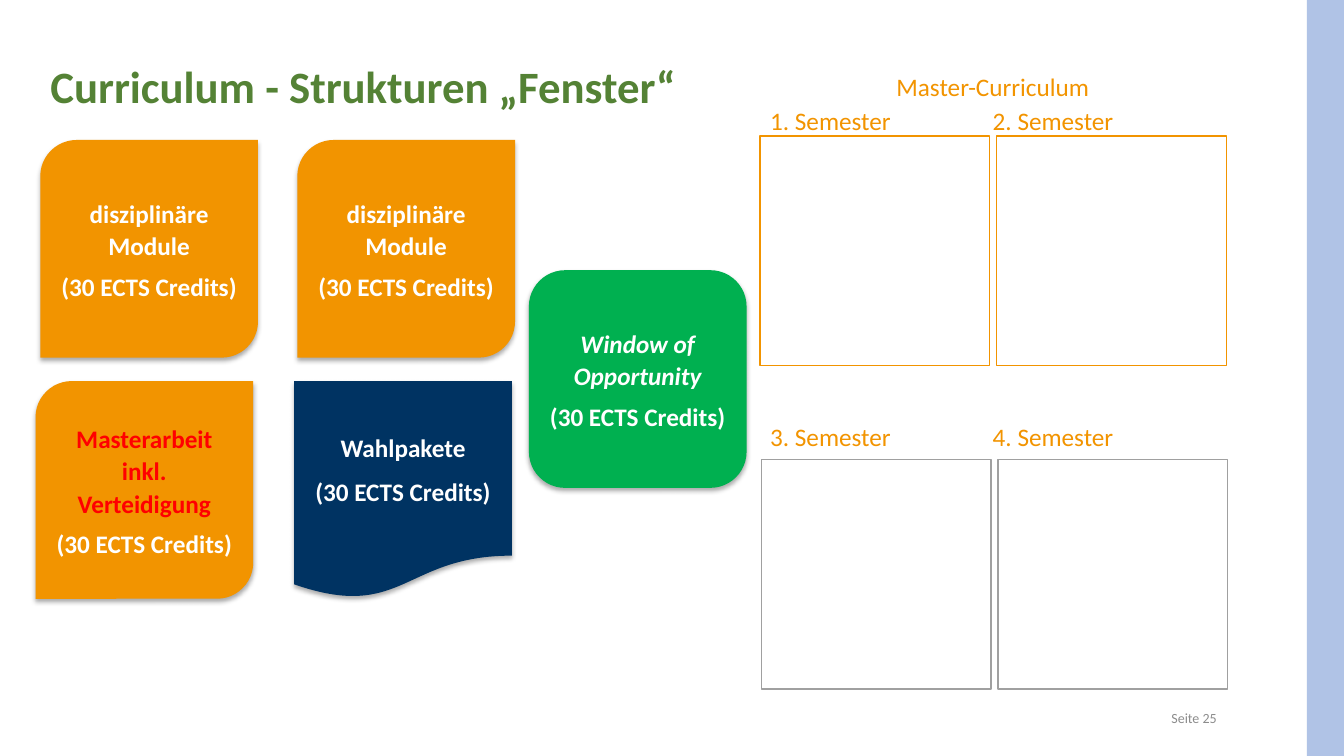
import pptx
import pptx.util
import pptx.dml.color
import pptx.enum.shapes
import pptx.enum.text
import pptx.oxml
import pptx.oxml.ns

Pt = pptx.util.Pt
RGBColor = pptx.dml.color.RGBColor
SHAPE = pptx.enum.shapes.MSO_SHAPE
ALIGN = pptx.enum.text.PP_ALIGN
ANCHOR = pptx.enum.text.MSO_ANCHOR

ORANGE = RGBColor(0xF2, 0x94, 0x00)
NAVY = RGBColor(0x00, 0x33, 0x62)
GREEN = RGBColor(0x00, 0xB0, 0x50)
TITLE_GREEN = RGBColor(0x54, 0x82, 0x35)
RED = RGBColor(0xFF, 0x00, 0x00)
WHITE = RGBColor(0xFF, 0xFF, 0xFF)
GREY = RGBColor(0x8C, 0x8C, 0x8C)
FRAME_GREY = RGBColor(0xA0, 0xA0, 0xA0)
SIDE_BLUE = RGBColor(0x8F, 0xAA, 0xDC)

SHADOW = (
    f'<a:effectLst {pptx.oxml.ns.nsdecls("a")}>'
    '<a:outerShdw blurRad="44450" dist="27940" dir="5400000" algn="ctr" rotWithShape="0">'
    '<a:srgbClr val="000000"><a:alpha val="32000"/></a:srgbClr>'
    '</a:outerShdw></a:effectLst>'
)
CREDITS = "(30 ECTS Credits)"


def write(paragraph, text, size=18, color=WHITE, bold=False, italic=False,
          align=ALIGN.LEFT, spacing=None, after=None):
    """Put one formatted run into a paragraph."""
    paragraph.alignment = align
    paragraph.line_spacing = spacing
    if after is not None:
        paragraph.space_after = Pt(after)
    run = paragraph.add_run()
    run.text = text
    font = run.font
    font.name = "Calibri"
    font.size = Pt(size)
    font.bold = bold
    font.italic = italic
    font.color.rgb = color


class CurriculumSlide:
    card_side = 155.5
    frame_side = 164

    def __init__(self, slide):
        self.slide = slide

    def title(self, text, left, top, width, height):
        heading = self.slide.shapes.title
        heading.left, heading.top = Pt(left), Pt(top)
        heading.width, heading.height = Pt(width), Pt(height)
        frame = heading.text_frame
        frame.auto_size = pptx.enum.text.MSO_AUTO_SIZE.NONE
        frame.vertical_anchor = ANCHOR.MIDDLE
        write(frame.paragraphs[0], text, size=32, color=TITLE_GREEN, bold=True, spacing=0.9)

    def label(self, text, left, top, width, height=29, **style):
        box = self.slide.shapes.add_textbox(Pt(left), Pt(top), Pt(width), Pt(height))
        box.text_frame.word_wrap = True
        box.text_frame.vertical_anchor = ANCHOR.MIDDLE
        write(box.text_frame.paragraphs[0], text, **style)

    def panel(self, kind, left, top, width, height, fill=None, line=None):
        panel = self.slide.shapes.add_shape(kind, Pt(left), Pt(top), Pt(width), Pt(height))
        panel.shadow.inherit = False
        if fill is None:
            panel.fill.background()
        else:
            panel.fill.solid()
            panel.fill.fore_color.rgb = fill
        if line is None:
            panel.line.fill.background()
        else:
            panel.line.color.rgb = line
            panel.line.width = Pt(1)
        return panel

    def frame(self, left, top, color):
        self.panel(SHAPE.RECTANGLE, left, top, self.frame_side, self.frame_side, line=color)

    def card(self, kind, left, top, fill, heading, after=6, **heading_style):
        card = self.panel(kind, left, top, self.card_side, self.card_side, fill=fill)
        properties = card.fill._xPr
        properties.remove(properties.find(pptx.oxml.ns.qn("a:effectLst")))
        properties.append(pptx.oxml.parse_xml(SHADOW))
        body = card.text_frame
        body.word_wrap = True
        body.vertical_anchor = ANCHOR.MIDDLE
        layout = dict(bold=True, align=ALIGN.CENTER, spacing=1.07, after=after)
        write(body.paragraphs[0], heading, **layout, **heading_style)
        write(body.add_paragraph(), CREDITS, **layout)

    def side_bar(self, left, width, height):
        bar = self.panel(SHAPE.RECTANGLE, left, 0, width, height, fill=SIDE_BLUE)
        color = bar.fill._xPr.find(".//" + pptx.oxml.ns.qn("a:srgbClr"))
        color.append(pptx.oxml.parse_xml(
            f'<a:alpha {pptx.oxml.ns.nsdecls("a")} val="70000"/>'))


def main():
    deck = pptx.Presentation()
    deck.slide_width, deck.slide_height = Pt(960), Pt(540)
    page = CurriculumSlide(deck.slides.add_slide(deck.slide_layouts[5]))

    page.title("Curriculum - Strukturen „Fenster“", 28.8, 44.6, 893.5, 38.2)

    # Semester grid
    page.label("Master-Curriculum", 541.4, 47.5, 335.5, color=ORANGE, align=ALIGN.CENTER)
    semester_rows = [(543, 97.2, 71.3, ORANGE), (543.8, 328.3, 297.4, FRAME_GREY)]
    for row, (left, frame_top, label_top, color) in enumerate(semester_rows):
        for column in range(2):
            page.frame(left + column * 169, frame_top, color)
            page.label(f"{2 * row + column + 1}. Semester", 543 + column * 159,
                       label_top, 159, color=ORANGE)

    # Module cards
    page.card(SHAPE.FLOWCHART_DOCUMENT, 210.2, 272.2, NAVY, "Wahlpakete", after=8)
    for left in (28.8, 212.4):
        page.card(SHAPE.ROUND_2_DIAG_RECTANGLE, left, 100, ORANGE, "disziplinäre Module")
    page.card(SHAPE.ROUND_2_DIAG_RECTANGLE, 25.4, 272.2, ORANGE,
              "Masterarbeit inkl. Verteidigung", color=RED)
    page.card(SHAPE.ROUNDED_RECTANGLE, 377.8, 193, GREEN, "Window of Opportunity", italic=True)

    # Page number and side bar
    page.label("Seite 25", 660.2, 498.5, 216, size=10, color=GREY, align=ALIGN.RIGHT)
    page.side_bar(933.5, 26.5, 540)

    deck.save("out.pptx")


if __name__ == "__main__":
    main()
